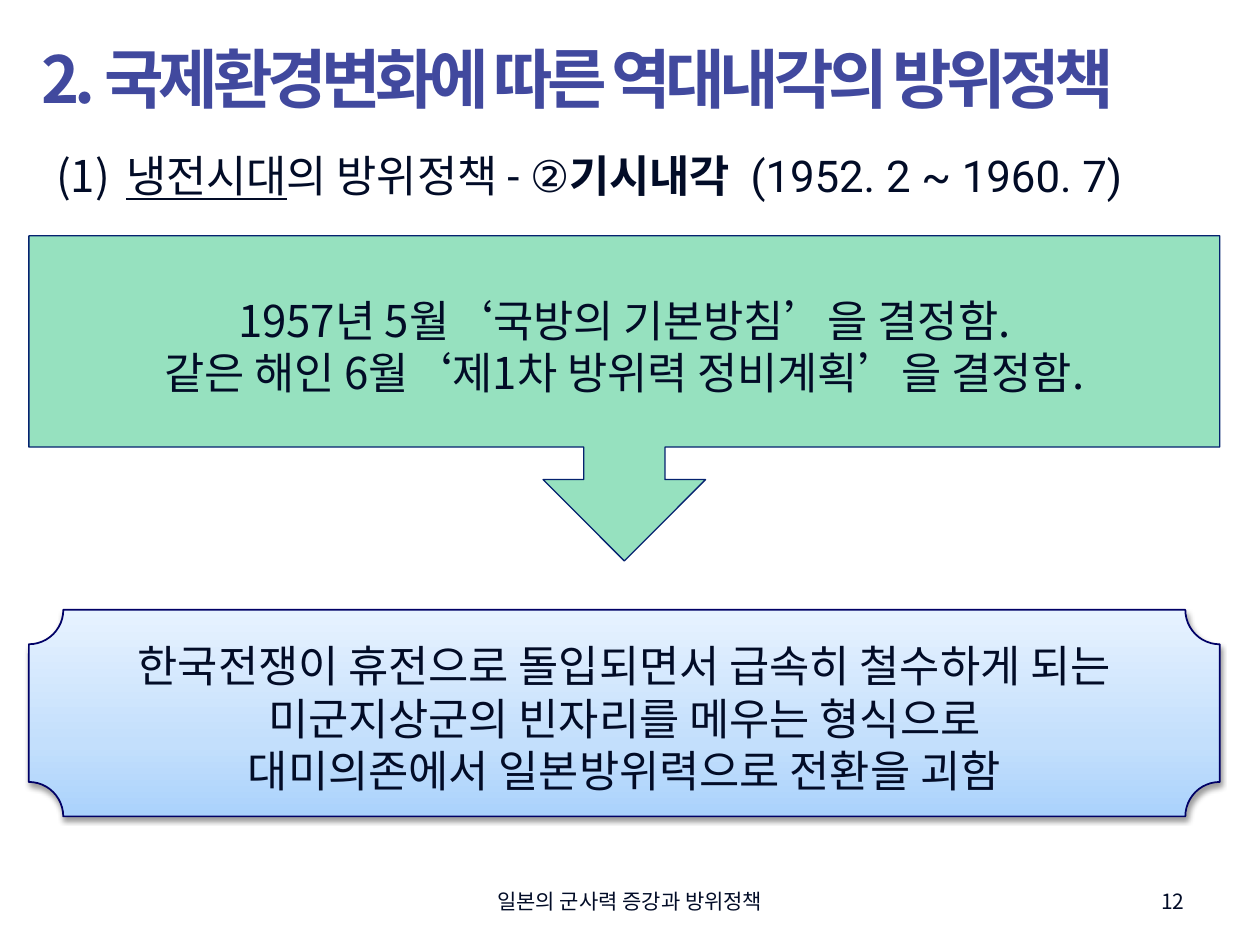
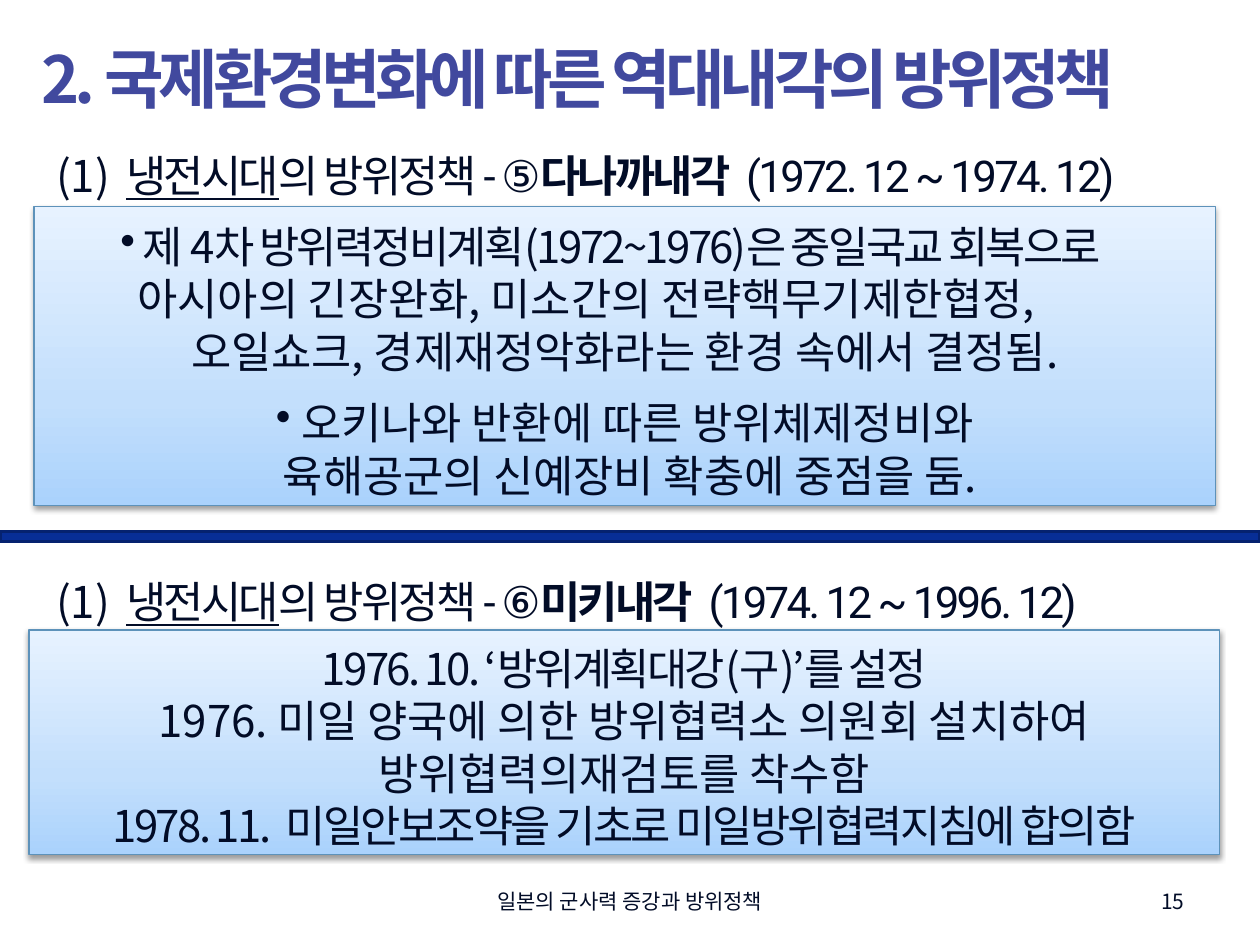
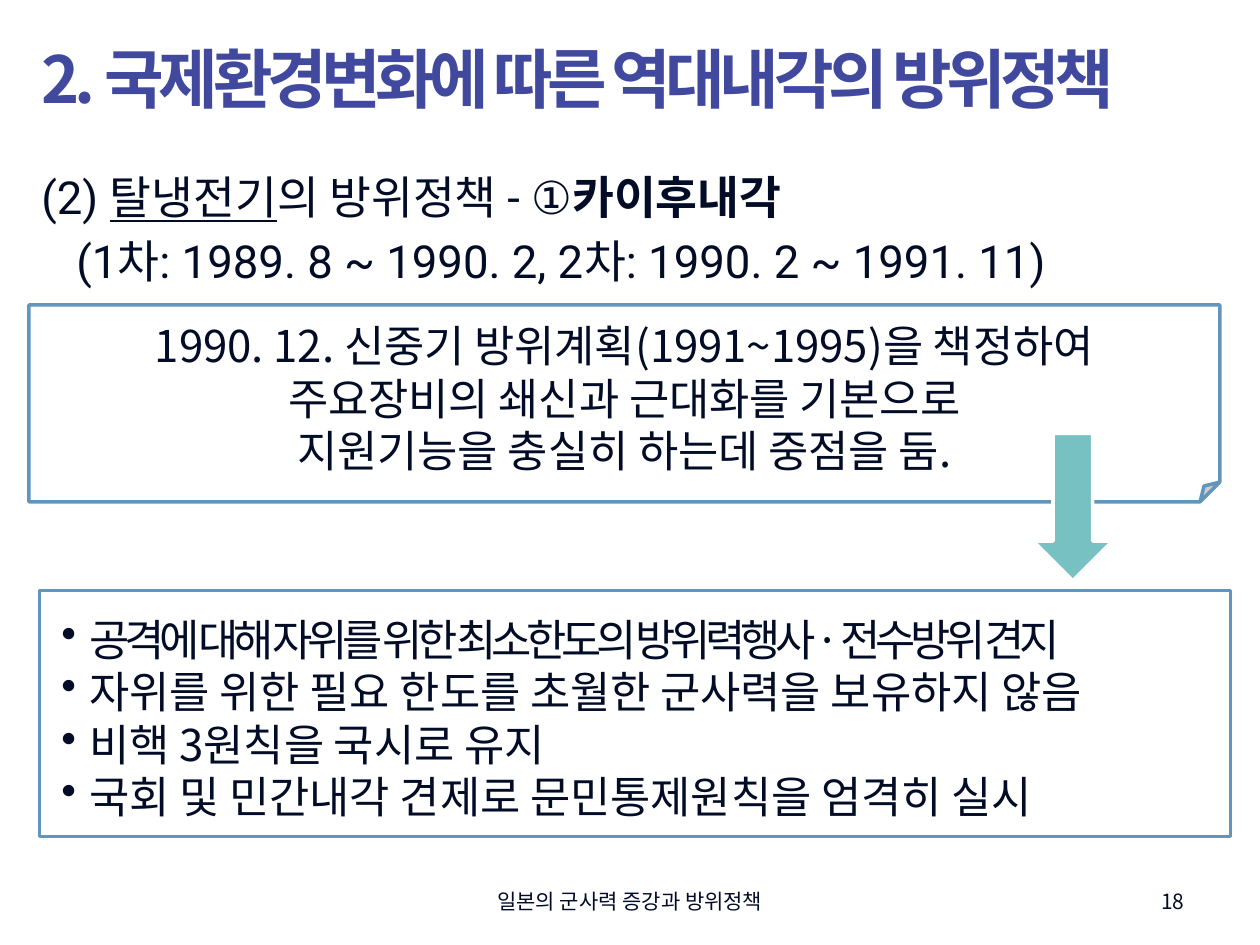
from copy import deepcopy

from pptx import Presentation
from pptx.dml.color import RGBColor
from pptx.enum.shapes import MSO_SHAPE
from pptx.enum.text import MSO_ANCHOR, PP_ALIGN
from pptx.oxml import parse_xml
from pptx.oxml.ns import nsdecls, qn
from pptx.util import Pt

INK = RGBColor(0x02, 0x0C, 0x27)
TITLE_BLUE = RGBColor(0x41, 0x49, 0x9E)
NAVY = RGBColor(0x05, 0x22, 0x6F)
BAND_BLUE = RGBColor(0x07, 0x2E, 0x96)
PLAQUE_EDGE = RGBColor(0x00, 0x00, 0x66)
PANEL_EDGE = RGBColor(0x5D, 0x92, 0xBA)
CARD_EDGE = RGBColor(0x61, 0x95, 0xBC)
MINT = RGBColor(0x96, 0xE1, 0xBF)
TEAL = RGBColor(0x77, 0xC1, 0xC2)
WHITE = RGBColor(0xFF, 0xFF, 0xFF)
SKY = [
    (0, RGBColor(0xAA, 0xD2, 0xFC)),
    (0.35, RGBColor(0xC3, 0xDF, 0xFC)),
    (1, RGBColor(0xE7, 0xF2, 0xFF)),
]

KOREAN = "Noto Sans CJK KR"
LATIN = "Roboto"
TITLE = "2. 국제환경변화에 따른 역대내각의 방위정책"
FOOTER = "일본의 군사력 증강과 방위정책"
LEFT, WIDTH = 16.5, 680.5
TIGHT = -1.5


def add_run(paragraph, text, size, font, color, bold=False, underline=False, spacing=0):
    """Append one formatted run."""
    run = paragraph.add_run()
    run.text = text
    run.font.size = Pt(size)
    run.font.name = font
    run.font.bold = bold
    run.font.underline = underline
    run.font.color.rgb = color
    properties = run.font._element
    properties.set("spc", str(round(spacing * 100)))
    latin = properties.find(qn("a:latin"))
    latin.addnext(parse_xml(f'<a:ea {nsdecls("a")} typeface="{KOREAN}"/>'))


def line(*runs, bullet=None, left=0, hang=0, right=0, before=0, **style):
    """Describe one paragraph: its runs, indents, bullet and run style."""
    runs = [(run, {}) if isinstance(run, str) else run for run in runs]
    return dict(runs=runs, bullet=bullet, left=left, hang=hang,
                right=right, before=before, style=style)


def write(shape, lines, size=25, font=KOREAN, color=INK, align=PP_ALIGN.CENTER,
          anchor=MSO_ANCHOR.MIDDLE, pitch=30, top=8.6, **style):
    """Fill a shape with formatted lines."""
    frame = shape.text_frame
    frame.word_wrap = True
    frame.vertical_anchor = anchor
    frame.margin_top = Pt(top)
    for index, item in enumerate(lines):
        item = line(item) if isinstance(item, str) else item
        paragraph = frame.add_paragraph() if index else frame.paragraphs[0]
        paragraph.alignment = align
        if pitch:
            paragraph.line_spacing = Pt(pitch)
        paragraph.space_before = Pt(item["before"])
        properties = paragraph._p.get_or_add_pPr()
        properties.set("marL", str(Pt(item["left"])))
        properties.set("marR", str(Pt(item["right"])))
        properties.set("indent", str(Pt(-item["hang"])))
        if item["bullet"]:
            properties.append(parse_xml(item["bullet"]))
        for text, extra in item["runs"]:
            add_run(paragraph, text, size, font, color, **{**style, **item["style"], **extra})


DOT = f'<a:buChar {nsdecls("a")} char="•"/>'
NUMBER = f'<a:buAutoNum {nsdecls("a")} type="arabicParenBoth"/>'


def add_text(slide, x, y, width, height, lines, **style):
    """Add a text box."""
    box = slide.shapes.add_textbox(Pt(x), Pt(y), Pt(width), Pt(height))
    write(box, lines, **style)


def add_block(slide, kind, x, y, width, height, fill, edge, weight):
    """Add a preset shape with a plain fill or the shaded sky fill."""
    block = slide.shapes.add_shape(kind, Pt(x), Pt(y), Pt(width), Pt(height))
    block.shadow.inherit = False
    if fill is SKY:
        shade(block)
    else:
        block.fill.solid()
        block.fill.fore_color.rgb = fill
    block.line.color.rgb = edge
    block.line.width = Pt(weight)
    return block


def shade(block):
    """Give a block the sky gradient and a soft shadow."""
    block.fill.gradient()
    block.fill.gradient_angle = 90
    stops = block._element.spPr.find(".//" + qn("a:gsLst"))
    stops.insert(1, deepcopy(stops[0]))
    for stop, (position, color) in zip(block.fill.gradient_stops, SKY):
        stop.position = position
        stop.color.rgb = color
    block._element.spPr.find(qn("a:effectLst")).append(parse_xml(
        f'<a:outerShdw {nsdecls("a")} blurRad="{Pt(3.1)}" dist="{Pt(1.6)}" dir="5400000" '
        'rotWithShape="0"><a:srgbClr val="000000"><a:alpha val="38000"/></a:srgbClr>'
        '</a:outerShdw>'))


def set_fold(block, ratio):
    """Set the size of a folded corner."""
    guides = block._element.spPr.find(".//" + qn("a:avLst"))
    guides.append(parse_xml(
        f'<a:gd {nsdecls("a")} name="adj" fmla="val {round(ratio * 100000)}"/>'))


def add_page(deck, number):
    """Add a slide with the common title, footer and page number."""
    slide = deck.slides.add_slide(deck.slide_layouts[6])
    add_text(slide, LEFT, 16.5, WIDTH, 56, [TITLE], size=37, color=TITLE_BLUE, bold=True,
             spacing=-3, align=PP_ALIGN.LEFT, pitch=None, top=3.6)
    small = dict(size=12, pitch=None, top=3.6)
    add_text(slide, 246, 500.5, 228, 29, [FOOTER], **small)
    add_text(slide, 516, 500.5, 168, 29, [str(number)], align=PP_ALIGN.RIGHT, **small)
    return slide


def add_cabinet(slide, y, mark, cabinet, years, spacing=0, gap=6.2):
    """Add the numbered Cold War heading for one cabinet."""
    heading = line(("냉전시대", dict(underline=True)), f"의 방위정책 - {mark}",
                   (cabinet, dict(bold=True)), (" ", dict(spacing=gap)), years,
                   bullet=NUMBER, left=40, hang=40)
    add_text(slide, 25, y, 664, 40, [heading], font=LATIN, align=PP_ALIGN.LEFT,
             anchor=MSO_ANCHOR.TOP, top=6.5, spacing=spacing)


def add_kishi(deck):
    """Build the Kishi cabinet slide."""
    slide = add_page(deck, 12)
    add_cabinet(slide, 78.5, "②", "기시내각", "(1952. 2 ~ 1960. 7)")
    decisions = add_block(slide, MSO_SHAPE.DOWN_ARROW_CALLOUT, LEFT, 134.75, WIDTH, 185.75,
                          MINT, NAVY, 0.75)
    write(decisions, ["1957년 5월‘국방의 기본방침’을 결정함.",
                      "같은 해인 6월‘제1차 방위력 정비계획’을 결정함."])
    outcome = add_block(slide, MSO_SHAPE.PLAQUE, LEFT, 348.5, WIDTH, 118, SKY, PLAQUE_EDGE, 1)
    write(outcome, ["한국전쟁이 휴전으로 돌입되면서 급속히 철수하게 되는",
                    "미군지상군의 빈자리를 메우는 형식으로",
                    "대미의존에서 일본방위력으로 전환을 괴함"])


def add_tanaka_miki(deck):
    """Build the slide on the Tanaka and Miki cabinets."""
    slide = add_page(deck, 15)
    tight = dict(spacing=TIGHT, gap=3.2)
    add_cabinet(slide, 78.5, "⑤", "다나까내각", "(1972. 12 ~ 1974. 12)", **tight)
    tanaka = add_block(slide, MSO_SHAPE.RECTANGLE, 19.5, 118, 675, 170.75, SKY, PANEL_EDGE, 0.75)
    write(tanaka, [
        line(" 제 4차 방위력정비계획(1972~1976)은 중일국교 회복으로",
             bullet=DOT, right=16, spacing=TIGHT),
        line("아시아의 긴장완화, 미소간의 전략핵무기제한협정,", right=44),
        "오일쇼크, 경제재정악화라는 환경 속에서 결정됨.",
        line(" 오키나와 반환에 따른 방위체제정비와", bullet=DOT, before=11),
        line("육해공군의 신예장비 확충에 중점을 둠.", left=6),
    ])
    add_cabinet(slide, 322, "⑥", "미키내각", "(1974. 12 ~ 1996. 12)", **tight)
    miki = add_block(slide, MSO_SHAPE.RECTANGLE, LEFT, 360, WIDTH, 128.25, SKY, PANEL_EDGE, 0.75)
    write(miki, [
        line("1976. 10. ‘방위계획대강(구)’를 설정", spacing=TIGHT),
        "1976. 미일 양국에 의한 방위협력소 의원회 설치하여",
        "방위협력의재검토를 착수함",
        line("1978. 11.", (" ", dict(spacing=2.6)),
             "미일안보조약을 기초로 미일방위협력지침에 합의함", spacing=TIGHT),
    ])
    add_block(slide, MSO_SHAPE.RECTANGLE, 0, 303.75, 720, 5.75, BAND_BLUE, NAVY, 2)


def add_kaifu(deck):
    """Build the Kaifu cabinet slide."""
    slide = add_page(deck, 18)
    add_text(slide, LEFT, 90, WIDTH, 84, [
        line("(2) ", ("탈냉전기", dict(underline=True)), "의 방위정책 - ①",
             ("카이후내각", dict(bold=True)), left=27, hang=27),
        line("(1차: 1989. 8 ~ 1990. 2, 2차: 1990. 2 ~ 1991. 11)", left=20, before=6),
    ], size=26, font=LATIN, align=PP_ALIGN.LEFT, anchor=MSO_ANCHOR.TOP, pitch=31, top=6.5)
    add_block(slide, MSO_SHAPE.FLOWCHART_PROCESS, 22.5, 337.5, WIDTH, 140.5, WHITE, CARD_EDGE, 2)
    principles = [
        ("공격에 대해 자위를 위한 최소한도의 방위력행사·전수방위 견지", -3),
        ("자위를 위한 필요 한도를 초월한 군사력을 보유하지 않음", 0),
        ("비핵 3원칙을 국시로 유지", 0),
        ("국회 및 민간내각 견제로 문민통제원칙을 엄격히 실시", 0),
    ]
    add_text(slide, 28, 343.5, 669.5, 128,
             [line(text, bullet=DOT, left=16, hang=16, spacing=spacing)
              for text, spacing in principles],
             align=PP_ALIGN.LEFT, anchor=MSO_ANCHOR.TOP, top=6.5)
    plan = add_block(slide, MSO_SHAPE.FOLDED_CORNER, LEFT, 174.25, WIDTH, 112.5,
                     WHITE, CARD_EDGE, 2)
    set_fold(plan, 0.1)
    write(plan, ["1990. 12. 신중기 방위계획(1991~1995)을 책정하여",
                 "주요장비의 쇄신과 근대화를 기본으로",
                 "지원기능을 충실히 하는데 중점을 둠."])
    add_block(slide, MSO_SHAPE.DOWN_ARROW, 590.4, 247.7, 45.4, 84.25, TEAL, WHITE, 2)


def main():
    """Build and save the deck."""
    deck = Presentation()
    deck.slide_width, deck.slide_height = Pt(720), Pt(540)
    add_kishi(deck)
    add_tanaka_miki(deck)
    add_kaifu(deck)
    deck.save("out.pptx")


if __name__ == "__main__":
    main()
